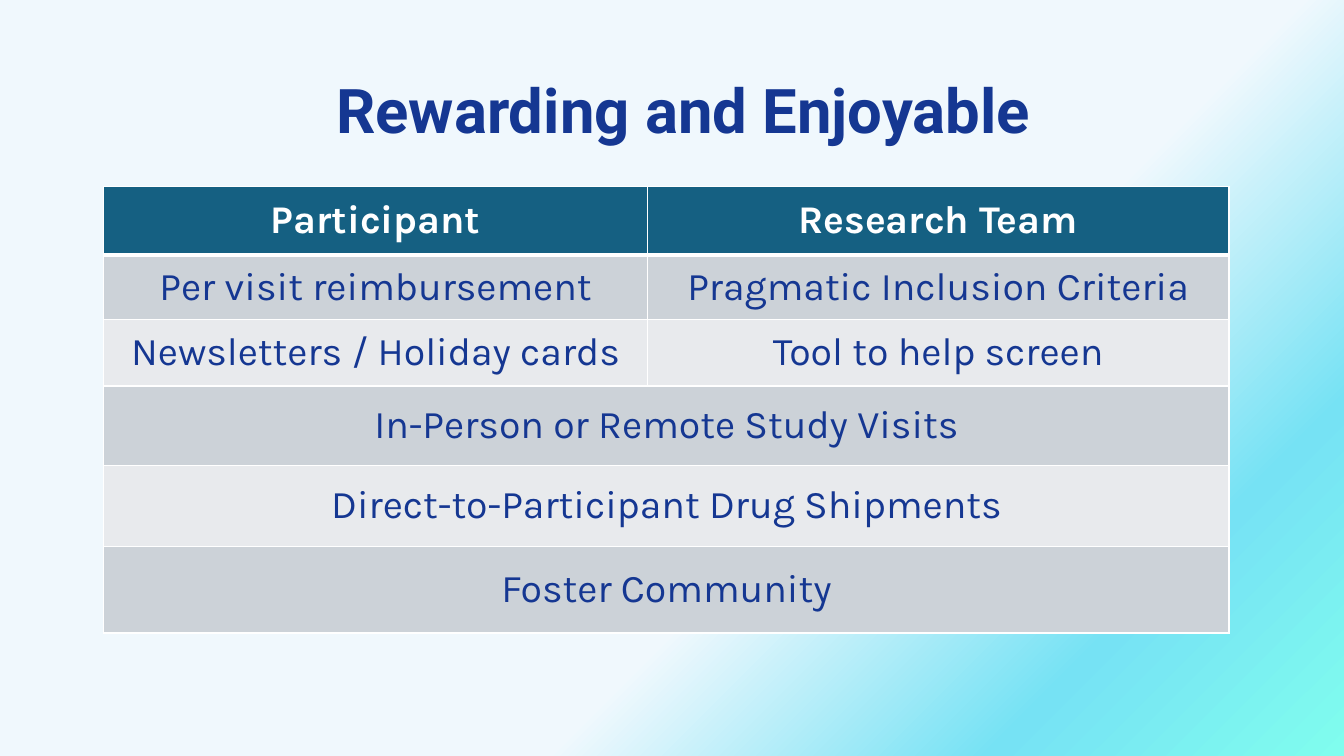
import pptx
import pptx.dml.color
import pptx.enum.text
import pptx.oxml
import pptx.oxml.ns
import pptx.util
from lxml import etree

Inches, Pt = pptx.util.Inches, pptx.util.Pt
qn = pptx.oxml.ns.qn
NAVY, WHITE, TEAL = "153792", "FFFFFF", "156082"
BANDS = ["CCD2D8", "E8EAED"]
# Position %, colour, opacity %
BACKGROUND_STOPS = [(0, "F0F8FD", 47), (62, "F0F8FD", 72),
                    (83, "76E2F4", 51), (100, "80FDEE", 100)]
# A row with one text spans both columns
ROWS = [
    ("Participant", "Research Team"),
    ("Per visit reimbursement", "Pragmatic Inclusion Criteria"),
    ("Newsletters / Holiday cards", "Tool to help screen"),
    ("In-Person or Remote Study Visits",),
    ("Direct-to-Participant Drug Shipments",),
    ("Foster Community",),
]
COL_WIDTHS = [5.39, 5.77]
ROW_HEIGHTS = [0.68, 0.64, 0.66, 0.79, 0.8, 0.86]


def rgb(color):
    return pptx.dml.color.RGBColor.from_string(color)


def format_text(tf, font, size, color, bold):
    tf.vertical_anchor = pptx.enum.text.MSO_ANCHOR.MIDDLE
    p = tf.paragraphs[0]
    p.alignment = pptx.enum.text.PP_ALIGN.CENTER
    for r in p.runs:
        r.font.name, r.font.size, r.font.bold = font, Pt(size), bold
        r.font.color.rgb = rgb(color)


def set_background(s):
    s.background.fill.gradient()
    grad = s.element.find(".//" + qn("a:gradFill"))
    stops = "".join(
        f'<a:gs pos="{pos * 1000}"><a:srgbClr val="{color}">'
        f'<a:alpha val="{alpha * 1000}"/></a:srgbClr></a:gs>'
        for pos, color, alpha in BACKGROUND_STOPS)
    grad.getparent().replace(grad, pptx.oxml.parse_xml(
        f'<a:gradFill {pptx.oxml.ns.nsdecls("a")} rotWithShape="1">'
        f'<a:gsLst>{stops}</a:gsLst><a:path path="circle">'
        '<a:fillToRect r="100000" b="100000"/></a:path></a:gradFill>'))


def add_title(s, left, top, width, height):
    title = s.shapes.title
    title.left, title.top = Inches(left), Inches(top)
    title.width, title.height = Inches(width), Inches(height)
    tf = title.text_frame
    tf.text = "Rewarding and Enjoyable"
    tf.paragraphs[0].line_spacing = 0.9
    format_text(tf, "Roboto", 44, NAVY, True)


def set_borders(cell, top, bottom):
    tc_pr = cell._tc.get_or_add_tcPr()
    widths = {"L": 1, "R": 1, "T": top, "B": bottom}
    for i, (side, width) in enumerate(widths.items()):
        ln = etree.Element(qn("a:ln" + side), w=str(Pt(width)))
        fill = etree.SubElement(ln, qn("a:solidFill"))
        etree.SubElement(fill, qn("a:srgbClr"), val=WHITE)
        tc_pr.insert(i, ln)


def add_table(s, left, top, width, height):
    table = s.shapes.add_table(len(ROWS), len(COL_WIDTHS), Inches(left), Inches(top),
                               Inches(width), Inches(height)).table
    for col, w in zip(table.columns, COL_WIDTHS):
        col.width = Inches(w)
    for i, texts in enumerate(ROWS):
        header = i == 0
        table.rows[i].height = Inches(ROW_HEIGHTS[i])
        # Fill and borders
        for j in range(len(COL_WIDTHS)):
            cell = table.cell(i, j)
            cell.fill.solid()
            cell.fill.fore_color.rgb = rgb(TEAL if header else BANDS[(i - 1) % 2])
            set_borders(cell, 3 if i == 1 else 1, 3 if header else 1)
        if len(texts) == 1:
            table.cell(i, 0).merge(table.cell(i, 1))
        # Text
        for j, text in enumerate(texts):
            cell = table.cell(i, j)
            cell.text_frame.text = text
            cell.vertical_anchor = pptx.enum.text.MSO_ANCHOR.MIDDLE
            format_text(cell.text_frame, "Karla", 28, WHITE if header else NAVY, header)


def main():
    prs = pptx.Presentation()
    prs.slide_width, prs.slide_height = Inches(13.33), Inches(7.5)
    s = prs.slides.add_slide(prs.slide_layouts[5])
    set_background(s)
    add_title(s, 0.56, 0.4, 12.44, 1.45)
    add_table(s, 1.03, 1.85, sum(COL_WIDTHS), sum(ROW_HEIGHTS))
    prs.save("out.pptx")


if __name__ == "__main__":
    main()
